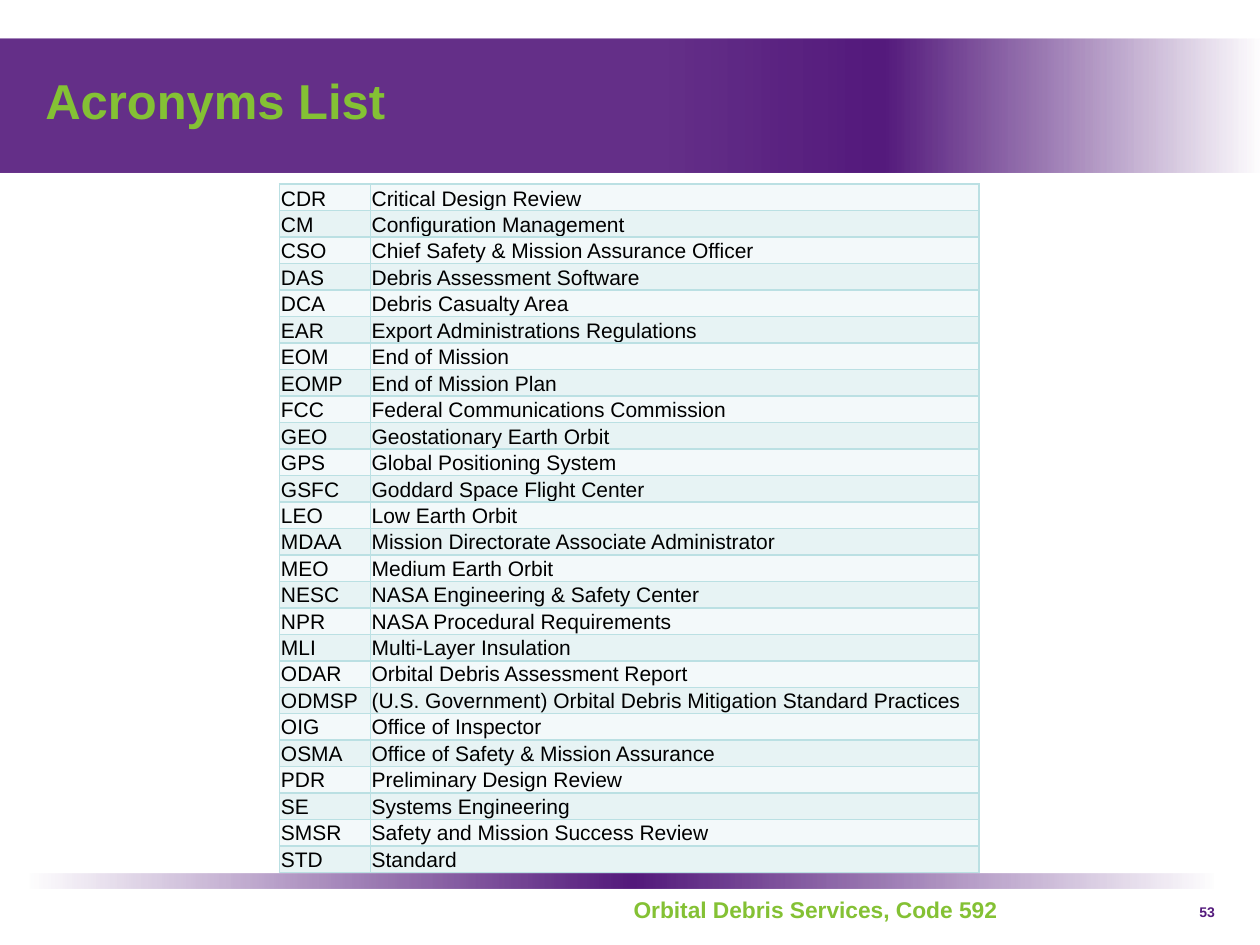
from lxml.etree import SubElement
from pptx import Presentation
from pptx.dml.color import RGBColor
from pptx.enum.shapes import MSO_SHAPE
from pptx.enum.text import MSO_ANCHOR, PP_ALIGN
from pptx.oxml import parse_xml
from pptx.oxml.ns import nsdecls, qn
from pptx.util import Inches, Pt

COLORS = {
    "purple": "541A7C",
    "green": "84C134",
    "text": "000000",
    "border": "BBE0E3",
    "odd_row": "F3F9FA",
    "even_row": "E7F3F4",
}

ACRONYMS = [
    ("CDR", "Critical Design Review"),
    ("CM", "Configuration Management"),
    ("CSO", "Chief Safety & Mission Assurance Officer"),
    ("DAS", "Debris Assessment Software"),
    ("DCA", "Debris Casualty Area"),
    ("EAR", "Export Administrations Regulations"),
    ("EOM", "End of Mission"),
    ("EOMP", "End of Mission Plan"),
    ("FCC", "Federal Communications Commission"),
    ("GEO", "Geostationary Earth Orbit"),
    ("GPS", "Global Positioning System"),
    ("GSFC", "Goddard Space Flight Center"),
    ("LEO", "Low Earth Orbit"),
    ("MDAA", "Mission Directorate Associate Administrator"),
    ("MEO", "Medium Earth Orbit"),
    ("NESC", "NASA Engineering & Safety Center"),
    ("NPR", "NASA Procedural Requirements"),
    ("MLI", "Multi-Layer Insulation"),
    ("ODAR", "Orbital Debris Assessment Report"),
    ("ODMSP", "(U.S. Government) Orbital Debris Mitigation Standard Practices"),
    ("OIG", "Office of Inspector"),
    ("OSMA", "Office of Safety & Mission Assurance"),
    ("PDR", "Preliminary Design Review"),
    ("SE", "Systems Engineering"),
    ("SMSR", "Safety and Mission Success Review"),
    ("STD", "Standard"),
]
BOTTOM_ANCHORED_ROWS = 12


def write_text(frame, text, size, color, bold=False, align=PP_ALIGN.LEFT,
               anchor=MSO_ANCHOR.TOP, line_spacing=None):
    frame.word_wrap = True
    frame.vertical_anchor = anchor
    paragraph = frame.paragraphs[0]
    paragraph.alignment = align
    paragraph.line_spacing = line_spacing
    run = paragraph.add_run()
    run.text = text
    run.font.name = "Arial"
    run.font.size = Pt(size)
    run.font.bold = bold
    run.font.color.rgb = RGBColor.from_string(COLORS[color])


def add_gradient_band(slide, left, top, width, height, stops):
    """Draw a purple band; stops are (position %, opacity %) pairs."""
    band = slide.shapes.add_shape(MSO_SHAPE.RECTANGLE, left, top, width, height)
    band.shadow.inherit = False
    band.line.fill.background()
    stop_xml = "".join(
        f'<a:gs pos="{position * 1000}"><a:srgbClr val="{COLORS["purple"]}">'
        f'<a:alpha val="{opacity * 1000}"/></a:srgbClr></a:gs>'
        for position, opacity in stops)
    gradient = parse_xml(
        f'<a:gradFill {nsdecls("a")} rotWithShape="1"><a:gsLst>{stop_xml}</a:gsLst>'
        '<a:lin ang="0" scaled="0"/></a:gradFill>')
    band._element.spPr.find(qn("a:prstGeom")).addnext(gradient)


def add_header(slide, left, top, width, height):
    add_gradient_band(slide, left, top, width, height,
                      [(53, 90), (70, 100), (100, 0)])
    title = slide.shapes.title
    title.left, title.top = left + Inches(0.26), top + Inches(0.1)
    title.width, title.height = Inches(9.4), Inches(0.83)
    write_text(title.text_frame, "Acronyms List", 28, "green", bold=True,
               anchor=MSO_ANCHOR.MIDDLE, line_spacing=0.9)
    # Bring the title in front of its band
    slide.shapes._spTree.append(title._element)


def add_footer(slide, left, top, width):
    add_gradient_band(slide, left, top, width, Inches(0.12),
                      [(0, 0), (51, 100), (100, 0)])
    owner = slide.shapes.add_textbox(left + Inches(4.7), top + Inches(0.13),
                                     Inches(3.22), Inches(0.36))
    write_text(owner.text_frame, "Orbital Debris Services, Code 592", 13,
               "green", bold=True)
    page_number = slide.shapes.add_textbox(left + Inches(9.12), top + Inches(0.19),
                                           Inches(0.39), Inches(0.25))
    write_text(page_number.text_frame, "53", 8, "purple", bold=True,
               align=PP_ALIGN.RIGHT)


def add_cell_borders(cell):
    properties = cell._tc.get_or_add_tcPr()
    for index, side in enumerate(("a:lnL", "a:lnR", "a:lnT", "a:lnB")):
        border = SubElement(properties, qn(side), w=str(Pt(1)))
        fill = SubElement(border, qn("a:solidFill"))
        SubElement(fill, qn("a:srgbClr"), val=COLORS["border"])
        properties.insert(index, border)


def add_acronym_table(slide, left, top, width, height):
    table = slide.shapes.add_table(len(ACRONYMS), 2, left, top, width, height).table
    table.first_row = False
    table.columns[0].width = Inches(0.72)
    table.columns[1].width = width - Inches(0.72)
    for row, entry in enumerate(ACRONYMS):
        row_color = "even_row" if row % 2 else "odd_row"
        anchor = (MSO_ANCHOR.BOTTOM if row < BOTTOM_ANCHORED_ROWS
                  else MSO_ANCHOR.MIDDLE)
        for column, text in enumerate(entry):
            cell = table.cell(row, column)
            cell.margin_left = cell.margin_right = cell.margin_top = Inches(0.01)
            cell.margin_bottom = 0
            cell.vertical_anchor = anchor
            cell.fill.solid()
            cell.fill.fore_color.rgb = RGBColor.from_string(COLORS[row_color])
            add_cell_borders(cell)
            write_text(cell.text_frame, text, 12, "text", anchor=None)


def main():
    presentation = Presentation()
    presentation.slide_width = Inches(10)
    presentation.slide_height = Inches(7.5)
    slide = presentation.slides.add_slide(presentation.slide_layouts[5])

    add_header(slide, Inches(0), Inches(0.31), Inches(10), Inches(1.06))
    add_footer(slide, Inches(0.23), Inches(6.93), Inches(9.41))
    add_acronym_table(slide, Inches(2.22), Inches(1.46), Inches(5.55), Inches(5.44))

    presentation.save("out.pptx")


if __name__ == "__main__":
    main()
